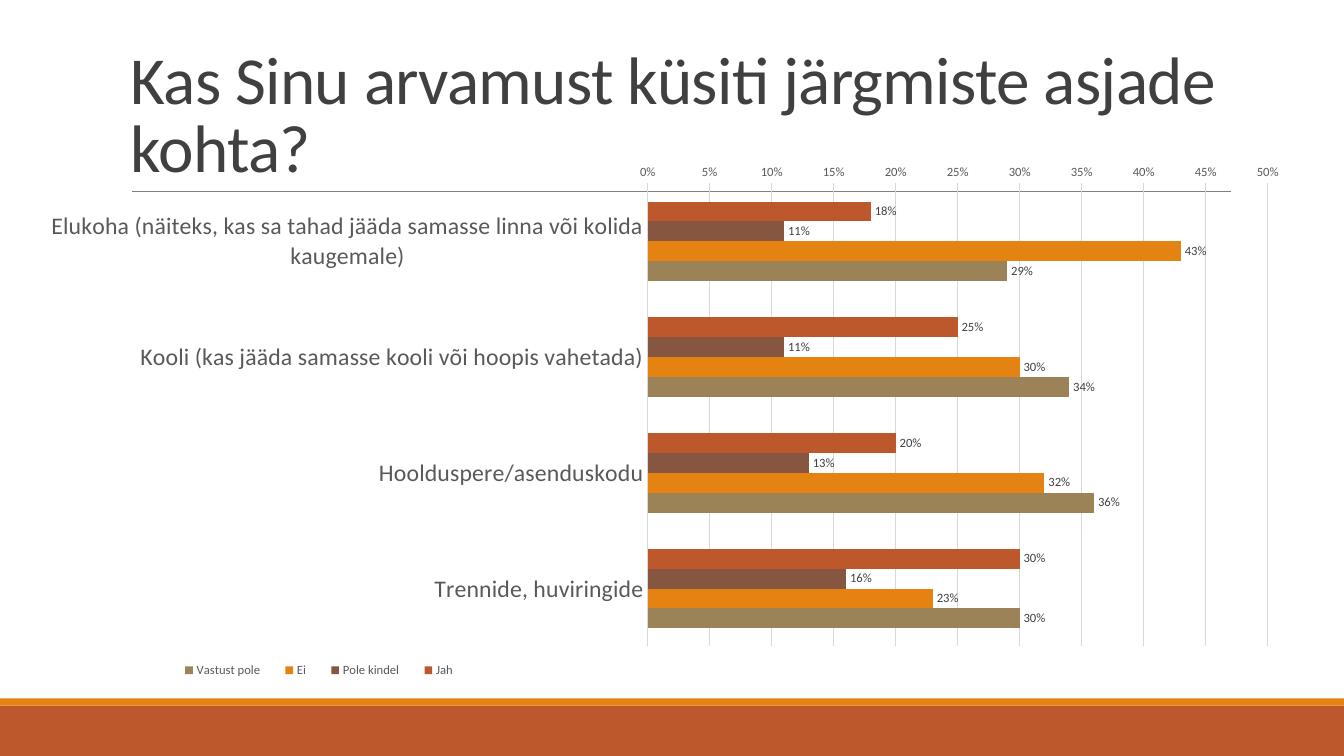
from lxml import etree
from pptx import Presentation
from pptx.chart.data import CategoryChartData
from pptx.dml.color import RGBColor
from pptx.enum.chart import (XL_AXIS_CROSSES, XL_CHART_TYPE, XL_LABEL_POSITION,
                             XL_LEGEND_POSITION, XL_TICK_MARK)
from pptx.enum.shapes import MSO_CONNECTOR, MSO_SHAPE
from pptx.enum.text import MSO_ANCHOR
from pptx.oxml.ns import qn
from pptx.util import Inches, Pt

BARS = XL_CHART_TYPE.BAR_CLUSTERED
BOTTOM = XL_LEGEND_POSITION.BOTTOM
OUTSIDE = XL_LABEL_POSITION.OUTSIDE_END
MAXIMUM = XL_AXIS_CROSSES.MAXIMUM
NO_TICK = XL_TICK_MARK.NONE
LINE = MSO_CONNECTOR.STRAIGHT
RECT = MSO_SHAPE.RECTANGLE
ANCHOR = MSO_ANCHOR.BOTTOM

RUST = RGBColor(0xBD, 0x58, 0x2C)
ORANGE = RGBColor(0xE4, 0x83, 0x12)
BROWN = RGBColor(0x86, 0x56, 0x40)
OLIVE = RGBColor(0x9B, 0x83, 0x57)
DARK = RGBColor(0x40, 0x40, 0x40)
TEXT = RGBColor(0x59, 0x59, 0x59)
GRID = RGBColor(0xD9, 0xD9, 0xD9)
GRAY = RGBColor(0x80, 0x80, 0x80)

FONT = "Calibri"
WIDTH, HEIGHT = 13.33, 7.5
TITLE = "Kas Sinu arvamust küsiti järgmiste asjade kohta?"
TOPICS = [
    "Elukoha (näiteks, kas sa tahad jääda samasse linna või kolida kaugemale)",
    "Kooli (kas jääda samasse kooli või hoopis vahetada)",
    "Hoolduspere/asenduskodu",
    "Trennide, huviringide",
]
ANSWERS = [
    ("Jah", RUST, (0.18, 0.25, 0.20, 0.30)),
    ("Pole kindel", BROWN, (0.11, 0.11, 0.13, 0.16)),
    ("Ei", ORANGE, (0.43, 0.30, 0.32, 0.23)),
    ("Vastust pole", OLIVE, (0.29, 0.34, 0.36, 0.30)),
]


def set_font(font, size, color):
    font.name = FONT
    font.size = Pt(size)
    font.color.rgb = color


def set_line(line, color, width):
    line.color.rgb = color
    line.width = Pt(width)


def set_layout(part, after, box, inner=False):
    """Place a chart part at fractions of the chart's size."""
    for old in part.findall(qn("c:layout")):
        part.remove(old)
    layout = etree.Element(qn("c:layout"))
    manual = etree.SubElement(layout, qn("c:manualLayout"))
    rules = [("layoutTarget", "inner")] if inner else []
    rules += [("xMode", "edge"), ("yMode", "edge")]
    rules += zip("xywh", box)
    for tag, value in rules:
        etree.SubElement(manual, qn("c:" + tag)).set("val", str(value))
    if after is None:
        part.insert(0, layout)
    else:
        after.addnext(layout)


def add_footer(slide, left, top, width, height):
    # Thin orange strip above a rust band
    strip = 0.07
    for y, high, color in ((top + strip, height - strip, RUST),
                           (top, strip, ORANGE)):
        band = slide.shapes.add_shape(
            RECT, Inches(left), Inches(y), Inches(width), Inches(high))
        band.shadow.inherit = False
        band.fill.solid()
        band.fill.fore_color.rgb = color
        band.line.fill.background()


def add_title(slide, left, top, width, height):
    # Rule under the title
    base = Inches(top + height)
    rule = slide.shapes.add_connector(
        LINE, Inches(left + 0.11), base, Inches(left + width + 0.01), base)
    set_line(rule.line, GRAY, 0.5)
    etree.SubElement(rule._element.spPr, qn("a:effectLst"))

    # Title text
    box = slide.shapes.add_textbox(
        Inches(left), Inches(top), Inches(width), Inches(height))
    frame = box.text_frame
    frame.word_wrap = True
    frame.vertical_anchor = ANCHOR
    frame.text = TITLE
    line = frame.paragraphs[0]
    line.line_spacing = 0.85
    run = line.runs[0]
    set_font(run.font, 48, DARK)
    run._r.get_or_add_rPr().set("spc", "-50")


def add_bars(slide, left, top, width, height):
    data = CategoryChartData(number_format="0%")
    data.categories = TOPICS
    for name, _, values in ANSWERS:
        data.add_series(name, values)
    chart = slide.shapes.add_chart(
        BARS, Inches(left), Inches(top), Inches(width), Inches(height),
        data).chart
    chart.has_title = False
    chart.font.name = FONT
    chart.font.size = Pt(10)

    # Bars and their labels
    plot = chart.plots[0]
    plot.gap_width = 182
    plot.overlap = 0
    plot.vary_by_categories = False
    for series, (_, color, _) in zip(plot.series, ANSWERS):
        series.format.fill.solid()
        series.format.fill.fore_color.rgb = color
        labels = series.data_labels
        labels.show_value = True
        labels.position = OUTSIDE
        labels.number_format = "0%"
        labels.number_format_is_linked = False
        set_font(labels.font, 9, DARK)

    # Topics run from top to bottom, with the scale below them
    topics = chart.category_axis
    topics.reverse_order = True
    topics.crosses = MAXIMUM
    topics.has_major_gridlines = False
    set_line(topics.format.line, GRID, 0.75)
    set_font(topics.tick_labels.font, 17, TEXT)

    # Percent scale
    scale = chart.value_axis
    scale.minimum_scale = 0
    scale.maximum_scale = 0.5
    scale.major_unit = 0.05
    scale.format.line.fill.background()
    set_line(scale.major_gridlines.format.line, GRID, 0.75)
    scale.tick_labels.number_format = "0%"
    scale.tick_labels.number_format_is_linked = False
    set_font(scale.tick_labels.font, 9, TEXT)
    for axis in (topics, scale):
        axis.major_tick_mark = axis.minor_tick_mark = NO_TICK

    # Legend and plot area
    chart.has_legend = True
    legend = chart.legend
    legend.position = BOTTOM
    legend.include_in_layout = False
    set_font(legend.font, 9, TEXT)
    root = chart._chartSpace
    key = root.find(".//" + qn("c:legend"))
    set_layout(key, key.find(qn("c:legendPos")), (0.09, 0.88, 0.25, 0.06))
    set_layout(root.find(".//" + qn("c:plotArea")), None,
               (0.48, 0.09, 0.5, 0.78), inner=True)


def main():
    deck = Presentation()
    deck.slide_width = Inches(WIDTH)
    deck.slide_height = Inches(HEIGHT)
    slide = deck.slides.add_slide(deck.slide_layouts[6])
    add_footer(slide, 0, 6.93, WIDTH, 0.57)
    add_title(slide, 1.2, 0.31, 11, 1.59)
    add_bars(slide, 0.51, 1.29, 12.31, 5.89)
    deck.save("out.pptx")


if __name__ == "__main__":
    main()
